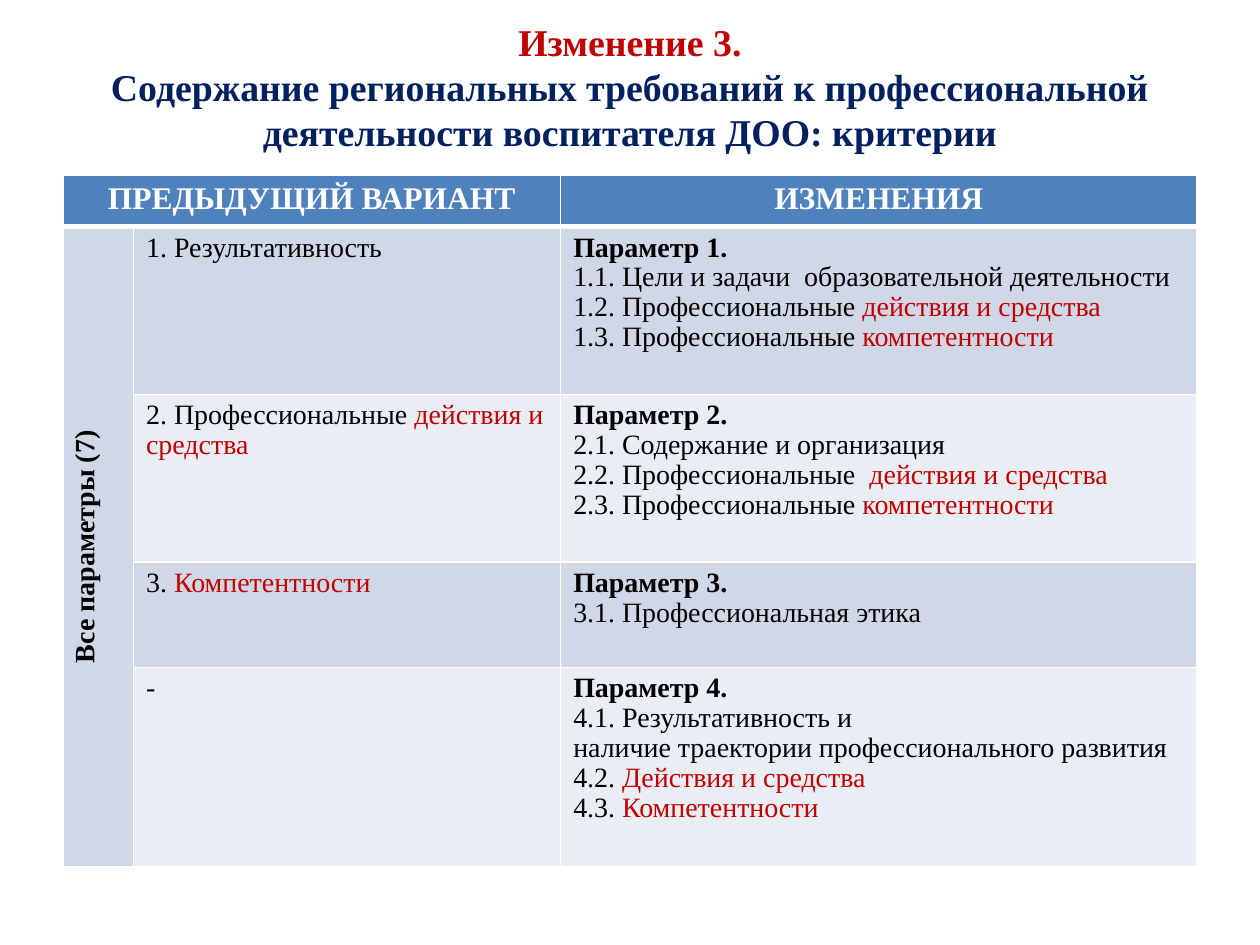
import pptx
import pptx.dml.color
import pptx.enum.text
import pptx.oxml
import pptx.util
from pptx.util import Inches

FONT = "Times New Roman"
RED, NAVY, BLACK, WHITE = "C00000", "002060", "000000", "FFFFFF"
BLUE, DARK_BAND, LIGHT_BAND = "4F81BD", "D0D8E8", "E9EDF4"
ACTIONS, SKILLS = "действия и средства", "компетентности"
CENTER = pptx.enum.text.PP_ALIGN.CENTER


def color(value):
    return pptx.dml.color.RGBColor.from_string(value)


class CriteriaSlide:
    """Holds the style and the current slide."""

    def __init__(self, deck):
        self.page = deck.slides.add_slide(deck.slide_layouts[5])

    def style(self, span, size, ink, bold=False):
        span.font.name = FONT
        span.font.size = pptx.util.Pt(size)
        span.font.bold = bold
        span.font.color.rgb = color(ink)

    def title(self, heading, subject):
        box = self.page.shapes.title
        box.left, box.top = Inches(0.5), Inches(0.3)
        box.width, box.height = Inches(9), Inches(0.77)
        frame = box.text_frame
        frame.word_wrap = True
        frame.auto_size = pptx.enum.text.MSO_AUTO_SIZE.NONE
        frame.vertical_anchor = pptx.enum.text.MSO_ANCHOR.MIDDLE
        frame.text = heading + "\v" + subject
        para = frame.paragraphs[0]
        para.alignment = CENTER
        for span, ink in zip(para.runs, (RED, NAVY)):
            self.style(span, 21.6, ink, True)

    def table(self, left, top, widths, heights):
        frame = self.page.shapes.add_table(
            len(heights), len(widths), Inches(left), Inches(top),
            Inches(sum(widths)), Inches(sum(heights)))
        for column, width in zip(frame.table.columns, widths):
            column.width = Inches(width)
        for row, height in zip(frame.table.rows, heights):
            row.height = Inches(height)
        return frame.table

    def cell(self, cell, lines, fill, size=16, ink=BLACK, bold=False,
             align=None, spacing=None, bottom=1):
        """Each line is a tuple: plain text, then optional red text."""
        self.borders(cell, bottom)
        cell.fill.solid()
        cell.fill.fore_color.rgb = color(fill)
        for index, line in enumerate(lines):
            frame = cell.text_frame
            para = frame.add_paragraph() if index else frame.paragraphs[0]
            para.alignment = align
            para.line_spacing = spacing
            for text, shade in zip(line, (ink, RED)):
                span = para.add_run()
                span.text = text
                heading = text.startswith("Параметр")
                self.style(span, size, shade, bold or heading)

    def borders(self, cell, bottom):
        properties = cell._tc.get_or_add_tcPr()
        for side, width in (("L", 1), ("R", 1), ("T", 1), ("B", bottom)):
            properties.append(pptx.oxml.parse_xml(
                '<a:ln%s xmlns:a="http://schemas.openxmlformats.org/drawingml/2006/main"'
                ' w="%d"><a:solidFill><a:srgbClr val="%s"/></a:solidFill></a:ln%s>'
                % (side, pptx.util.Pt(width), WHITE, side)))


# Previous criteria beside the changed ones
ROWS = [
    ([("1. Результативность",)],
     [("Параметр 1.",),
      ("1.1. Цели и задачи  образовательной деятельности",),
      ("1.2. Профессиональные ", ACTIONS),
      ("1.3. Профессиональные ", SKILLS)]),
    ([("2. Профессиональные ", ACTIONS)],
     [("Параметр 2.",),
      ("2.1. Содержание и организация",),
      ("2.2. Профессиональные  ", ACTIONS),
      ("2.3. Профессиональные ", SKILLS)]),
    ([("3. ", SKILLS.capitalize())],
     [("Параметр 3.",),
      ("3.1. Профессиональная этика",)]),
    ([("-",)],
     [("Параметр 4.",),
      ("4.1. Результативность и",),
      ("наличие траектории профессионального развития",),
      ("4.2. ", ACTIONS.capitalize()),
      ("4.3. ", SKILLS.capitalize())]),
]


def main():
    deck = pptx.Presentation()
    deck.slide_width, deck.slide_height = Inches(10), Inches(7.5)
    slide = CriteriaSlide(deck)
    slide.title("Изменение 3.",
                "Содержание региональных требований к профессиональной "
                "деятельности воспитателя ДОО: критерии")

    # Grid with merged header and merged side label
    table = slide.table(0.5, 1.39, (0.56, 3.39, 5.05),
                        (0.41, 1.33, 1.33, 0.84, 1.58))
    table.cell(0, 0).merge(table.cell(0, 1))
    table.cell(1, 0).merge(table.cell(4, 0))

    # Header row
    for column, text in ((0, "ПРЕДЫДУЩИЙ ВАРИАНТ"), (2, "ИЗМЕНЕНИЯ")):
        slide.cell(table.cell(0, column), [(text,)], BLUE, 18, WHITE, True,
                   CENTER, bottom=3)

    # Vertical label
    label = table.cell(1, 0)
    slide.cell(label, [("Все параметры (7)",)], DARK_BAND, bold=True,
               align=CENTER)
    label._tc.get_or_add_tcPr().set("vert", "vert270")

    # Banded body rows
    for number, cells in enumerate(ROWS, 1):
        band = DARK_BAND if number % 2 else LIGHT_BAND
        for column, lines in enumerate(cells, 1):
            slide.cell(table.cell(number, column), lines, band, spacing=0.96)

    deck.save("out.pptx")


if __name__ == "__main__":
    main()
